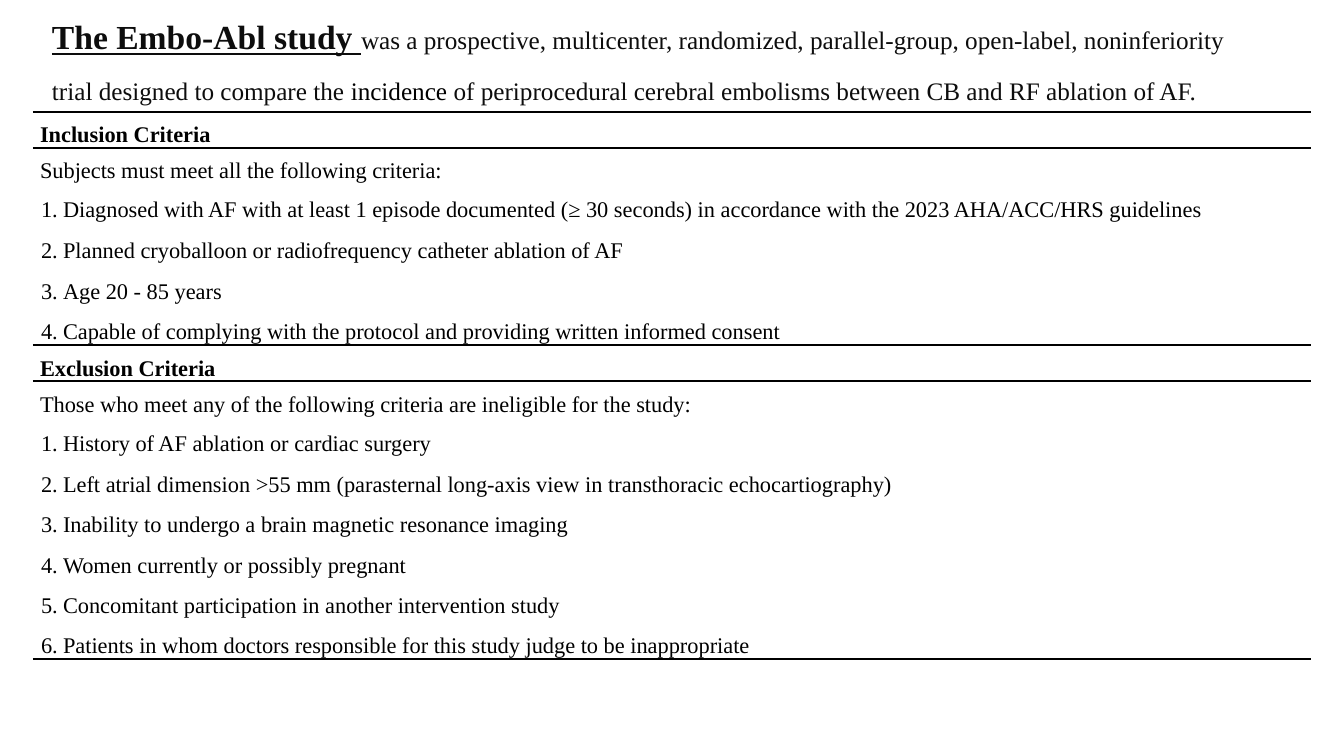
from dataclasses import dataclass
from enum import Enum

from lxml.etree import SubElement
from pptx import Presentation
from pptx.dml.color import RGBColor
from pptx.enum.shapes import MSO_CONNECTOR
from pptx.enum.text import MSO_ANCHOR, MSO_AUTO_SIZE, PP_ALIGN
from pptx.oxml.ns import qn
from pptx.util import Emu, Pt


@dataclass(frozen=True)
class Theme:
    font: str = "Times New Roman"
    ink: RGBColor = RGBColor(0, 0, 0)
    title_ink: RGBColor = RGBColor(0x0D, 0x0D, 0x0D)
    study_size: int = 24
    title_size: int = 18
    body_size: int = 16
    rule_width: int = 1


@dataclass(frozen=True)
class Box:
    left: int
    top: int
    width: int
    height: int
    inset_top: int


@dataclass(frozen=True)
class Span:
    text: str
    size: int
    color: RGBColor
    bold: bool = False
    underline: bool = False


class Role(Enum):
    HEADING = "heading"
    LEAD = "lead"
    ITEM = "item"


@dataclass(frozen=True)
class Line:
    text: str
    role: Role
    space_before: float
    level: int = 0


THEME = Theme()
TITLE_BOX = Box(51, 15, 1200, 92, 1)
BODY_BOX = Box(39, 110, 1169, 549, 10)
RULE_LEFT, RULE_RIGHT = 33, 1311
RULE_TOPS = (112, 148, 345, 381, 659)
MARGIN, ITEM_MARGIN, ITEM_INDENT = 1, 24, -22
BODY_LEADING = 19.25

TITLE_LINES = (
    (29, 0, (
        Span("The Embo-Abl study ", THEME.study_size, THEME.title_ink, True, True),
        Span("was a prospective, multicenter, randomized, parallel-group, open-label, noninferiority",
             THEME.title_size, THEME.title_ink),
    )),
    (22, 13.2, (
        Span("trial designed to compare the ", THEME.title_size, THEME.title_ink),
        Span("incidence ", THEME.title_size, THEME.ink),
        Span("of periprocedural cerebral embolisms between CB and RF ablation of AF.",
             THEME.title_size, THEME.title_ink),
    )),
)

BODY_LINES = (
    Line("Inclusion Criteria", Role.HEADING, 0),
    Line("Subjects must meet all the following criteria:", Role.LEAD, 6.5),
    Line("Diagnosed with AF with at least 1 episode documented (≥ 30 seconds) "
         "in accordance with the 2023 AHA/ACC/HRS guidelines", Role.ITEM, 8.8),
    Line("Planned cryoballoon or radiofrequency catheter ablation of AF", Role.ITEM, 9.8),
    Line("Age 20 - 85 years", Role.ITEM, 9.8),
    Line("Capable of complying with the protocol and providing written informed consent",
         Role.ITEM, 9.6),
    Line("Exclusion Criteria", Role.HEADING, 7),
    Line("Those who meet any of the following criteria are ineligible for the study:",
         Role.LEAD, 6.5),
    Line("History of AF ablation or cardiac surgery", Role.ITEM, 8.8, 1),
    Line("Left atrial dimension >55 mm (parasternal long-axis view in transthoracic "
         "echocartiography)", Role.ITEM, 9.8, 1),
    Line("Inability to undergo a brain magnetic resonance imaging", Role.ITEM, 9.8, 1),
    Line("Women currently or possibly pregnant", Role.ITEM, 9.8, 1),
    Line("Concomitant participation in another intervention study", Role.ITEM, 9.6, 1),
    Line("Patients in whom doctors responsible for this study judge to be inappropriate",
         Role.ITEM, 8.8, 1),
)


def px(length: int) -> Emu:
    return Emu(round(length * 914400 / 100.8))


def place(shape, box: Box) -> None:
    shape.left, shape.top = px(box.left), px(box.top)
    shape.width, shape.height = px(box.width), px(box.height)
    frame = shape.text_frame
    frame.margin_left = frame.margin_right = frame.margin_bottom = 0
    frame.margin_top = px(box.inset_top)
    frame.vertical_anchor = MSO_ANCHOR.TOP
    frame.auto_size = MSO_AUTO_SIZE.NONE
    frame.word_wrap = True


def set_spacing(para, leading: float, space_before: float) -> None:
    para.alignment = PP_ALIGN.LEFT
    para.line_spacing = Pt(leading)
    para.space_before = Pt(space_before)
    para.space_after = Pt(0)


def set_indent(para, numbered: bool) -> None:
    properties = para._p.get_or_add_pPr()
    margin = px(ITEM_MARGIN if numbered else MARGIN)
    properties.set("marL", str(margin))
    properties.set("indent", str(px(ITEM_INDENT) if numbered else 0))
    if numbered:
        SubElement(properties, qn("a:buFont"), typeface=THEME.font)
        SubElement(properties, qn("a:buAutoNum"), type="arabicPeriod")
        tabs = SubElement(properties, qn("a:tabLst"))
        SubElement(tabs, qn("a:tab"), pos=str(margin), algn="l")
    else:
        SubElement(properties, qn("a:buNone"))


def style_font(font, size: int, color: RGBColor, bold: bool, underline: bool = False) -> None:
    font.name = THEME.font
    font.size = Pt(size)
    font.color.rgb = color
    font.bold = bold
    font.underline = underline


def add_title(page) -> None:
    title = page.shapes.title
    place(title, TITLE_BOX)
    frame = title.text_frame
    for index, (leading, space_before, spans) in enumerate(TITLE_LINES):
        para = frame.add_paragraph() if index else frame.paragraphs[0]
        set_spacing(para, leading, space_before)
        set_indent(para, False)
        for span in spans:
            run = para.add_run()
            run.text = span.text
            style_font(run.font, span.size, span.color, span.bold, span.underline)


def add_criteria(page) -> None:
    body = page.placeholders[1]
    place(body, BODY_BOX)
    frame = body.text_frame
    frame.text = "\n".join(line.text for line in BODY_LINES)
    for para, line in zip(frame.paragraphs, BODY_LINES):
        para.level = line.level
        set_spacing(para, BODY_LEADING, line.space_before)
        set_indent(para, line.role is Role.ITEM)
        for font in (para.font, para.runs[0].font):
            style_font(font, THEME.body_size, THEME.ink, line.role is Role.HEADING)


def add_rule(page, top: int) -> None:
    rule = page.shapes.add_connector(
        MSO_CONNECTOR.STRAIGHT, px(RULE_LEFT), px(top), px(RULE_RIGHT), px(top))
    rule.line.color.rgb = THEME.ink
    rule.line.width = Pt(THEME.rule_width)
    SubElement(rule._element.spPr, qn("a:effectLst"))


def main() -> None:
    deck = Presentation()
    deck.slide_width, deck.slide_height = px(1344), px(756)
    page = deck.slides.add_slide(deck.slide_layouts[1])
    add_title(page)
    add_criteria(page)
    for top in RULE_TOPS:
        add_rule(page, top)
    deck.save("out.pptx")


if __name__ == "__main__":
    main()
